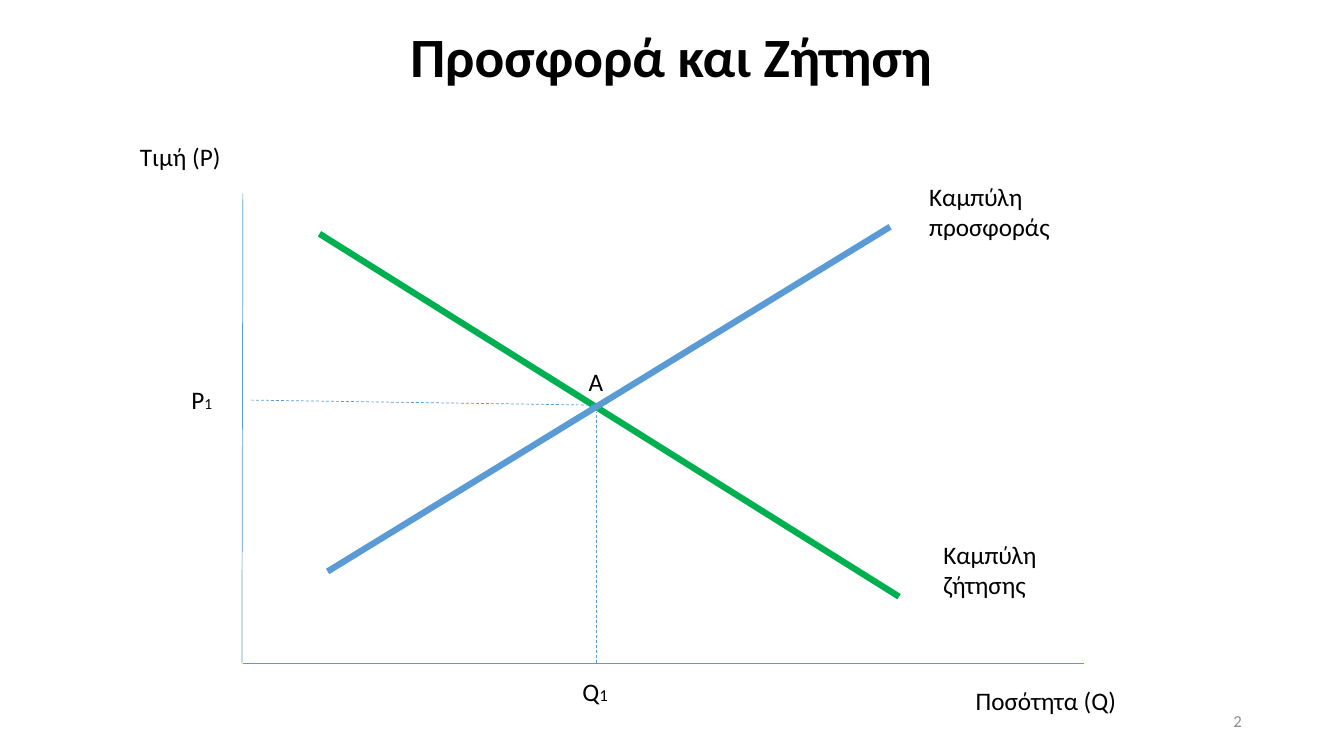
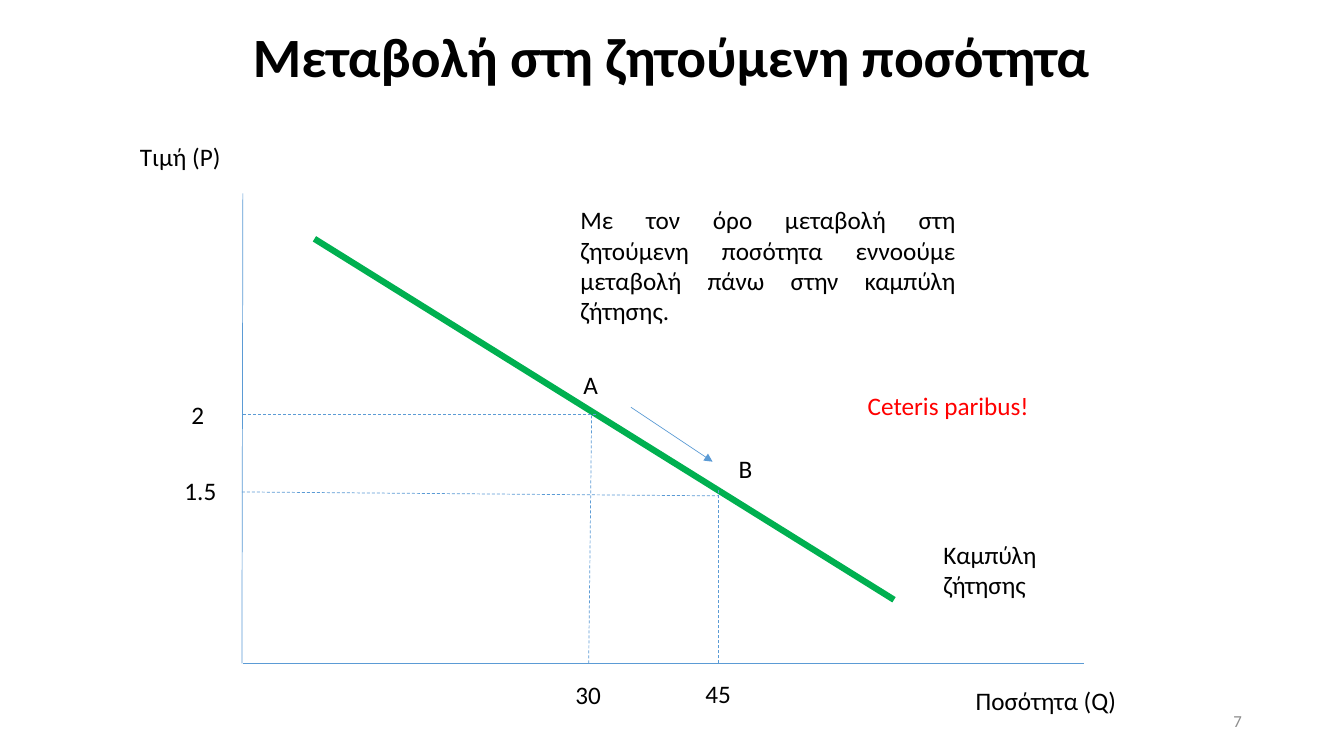
"""Build two supply and demand slides with python-pptx."""
from lxml import etree
from pptx import Presentation
from pptx.dml.color import RGBColor
from pptx.enum import dml, shapes, text
from pptx.oxml import ns
from pptx.util import Pt

COLOURS = {"text": "000000", "number": "8C8C8C", "blue": "5B9BD5",
           "demand": "00B050", "warning": "FF0000"}
FONT = "Calibri"
LINE_HEIGHT = 28.8
ORIGIN_X, ORIGIN_Y = 173.5, 473.8
TITLE_BOX = (169.2, 18, 620.6, 49)
NUMBER_BOX = (678.2, 500.4, 216, 28.8)
DEMAND_LABEL = ("Καμπύλη ζήτησης", (666.7, 381.6, 133.2, 51.1))


def apply_format(target, values):
    """Set every attribute named in a dict of format values."""
    for name, value in values.items():
        setattr(target, name, value)


def place(shape, box):
    """Move and size a shape to a box given in points."""
    names = ("left", "top", "width", "height")
    apply_format(shape, dict(zip(names, map(Pt, box))))


def colour(name):
    """Return the named colour."""
    return RGBColor.from_string(COLOURS[name])


def add_run(paragraph, content, size=18, bold=False, colour_name="text"):
    """Append a formatted run to a paragraph."""
    run = paragraph.add_run()
    run.text = content
    apply_format(run.font, {"name": FONT, "size": Pt(size), "bold": bold})
    run.font.color.rgb = colour(colour_name)


def add_title(slide, content):
    """Place and format the title placeholder."""
    title = slide.shapes.title
    place(title, TITLE_BOX)
    apply_format(title.text_frame, {
        "auto_size": text.MSO_AUTO_SIZE.NONE, "word_wrap": True,
        "vertical_anchor": text.MSO_ANCHOR.MIDDLE})
    paragraph = title.text_frame.paragraphs[0]
    apply_format(paragraph, {"alignment": text.PP_ALIGN.CENTER,
                             "line_spacing": 0.9})
    add_run(paragraph, content, 39.6, True)


def add_label(slide, content, box, wrap=True, align=text.PP_ALIGN.LEFT,
              anchor=text.MSO_ANCHOR.TOP, size=18, colour_name="text"):
    """Add a text box and return its paragraph."""
    shape = slide.shapes.add_textbox(*map(Pt, box))
    apply_format(shape.text_frame, {
        "word_wrap": wrap, "vertical_anchor": anchor,
        "auto_size": text.MSO_AUTO_SIZE.SHAPE_TO_FIT_TEXT})
    paragraph = shape.text_frame.paragraphs[0]
    paragraph.alignment = align
    add_run(paragraph, content, size, colour_name=colour_name)
    return paragraph


def add_mark(slide, content, left, top, width, subscript=None, size=12,
             colour_name="text"):
    """Add a short one-line mark, optionally with a small index."""
    paragraph = add_label(slide, content, (left, top, width, LINE_HEIGHT),
                          wrap=False, colour_name=colour_name)
    if subscript:
        add_run(paragraph, subscript, size)


def add_line(slide, start, end, colour_name="blue", width=0.5, dashed=False,
             arrow=False):
    """Draw a straight line between two points."""
    connector = slide.shapes.add_connector(
        shapes.MSO_CONNECTOR.STRAIGHT, *map(Pt, start + end))
    connector.line.color.rgb = colour(colour_name)
    connector.line.width = Pt(width)
    if dashed:
        connector.line.dash_style = dml.MSO_LINE.DASH
    if arrow:
        outline = connector.line._get_or_add_ln()
        etree.SubElement(outline, ns.qn("a:tailEnd"), type="triangle")
    etree.SubElement(connector._element.spPr, ns.qn("a:effectLst"))


def add_curve(slide, start, end, colour_name):
    """Draw a thick supply or demand curve."""
    add_line(slide, start, end, colour_name, 4.5)


def add_guides(slide, guides):
    """Draw dashed guide lines."""
    for start, end in guides:
        add_line(slide, start, end, dashed=True)


def add_diagram(presentation, title, number):
    """Add a slide with title, number, labelled axes and demand label."""
    slide = presentation.slides.add_slide(presentation.slide_layouts[5])
    add_title(slide, title)
    add_label(slide, number, NUMBER_BOX, align=text.PP_ALIGN.RIGHT,
              anchor=text.MSO_ANCHOR.MIDDLE, size=12, colour_name="number")
    add_line(slide, (ORIGIN_X, 138.2), (172.8, ORIGIN_Y))
    add_line(slide, (774, ORIGIN_Y), (ORIGIN_X, ORIGIN_Y))
    add_label(slide, "Τιμή (P)", (92.9, 97.2, 80.6, LINE_HEIGHT))
    add_label(slide, "Ποσότητα (Q)", (689.8, 486, 125.3, LINE_HEIGHT))
    add_label(slide, *DEMAND_LABEL)
    return slide


def build_equilibrium(presentation):
    """Build the supply and demand slide."""
    slide = add_diagram(presentation, "Προσφορά και Zήτηση", "2")
    add_curve(slide, (228.2, 167), (642.2, 426.2), "demand")
    add_curve(slide, (234, 408.2), (635.8, 162), "blue")
    add_label(slide, "Καμπύλη προσφοράς", (656.6, 126, 133.2, 51.1))
    add_guides(slide, [((179.3, 285.8), (426.2, 289.4)),
                       ((426.2, ORIGIN_Y), (426.2, 294.5))])
    add_mark(slide, "P", 129.6, 270.7, 29.5, "1", 11)
    add_mark(slide, "Q", 409, 479.5, 33.8, "1")
    add_mark(slide, "Α", 413.3, 257.8, 25.2)


def build_movement(presentation):
    """Build the slide on movement along the demand curve."""
    slide = add_diagram(presentation, "Μεταβολή στη ζητούμενη ποσότητα", "7")
    add_curve(slide, (224.6, 170.6), (638.6, 428.4), "demand")
    add_label(slide, "Με τον όρο μεταβολή στη ζητούμενη ποσότητα εννοούμε "
              "μεταβολή πάνω στην καμπύλη ζήτησης.",
              (407.5, 142.6, 282.2, 94.3), align=text.PP_ALIGN.JUSTIFY)
    add_guides(slide, [((ORIGIN_X, 295.9), (426.2, 295.9)),
                       ((420.5, ORIGIN_Y), (422.6, 296.6)),
                       ((172.8, 351.4), (513.4, 354.2)),
                       ((513.4, ORIGIN_Y), (513.4, 349.9))])
    add_line(slide, (450.7, 290.9), (509, 329.8), arrow=True)
    for mark in [("2", 129.6, 281.5, 23.8), ("1.5", 124.6, 336.2, 37.4),
                 ("30", 403.9, 481.7, 33.1), ("45", 496.8, 481, 33.1),
                 ("A", 409.7, 260.6, 25.2), ("B", 520.6, 320.4, 24.5)]:
        add_mark(slide, *mark)
    add_mark(slide, "Ceteris paribus!", 612.7, 275, 131,
             colour_name="warning")


def main():
    """Create and save the presentation."""
    presentation = Presentation()
    apply_format(presentation, {"slide_width": Pt(960),
                                "slide_height": Pt(540)})
    build_equilibrium(presentation)
    build_movement(presentation)
    presentation.save("out.pptx")


if __name__ == "__main__":
    main()
